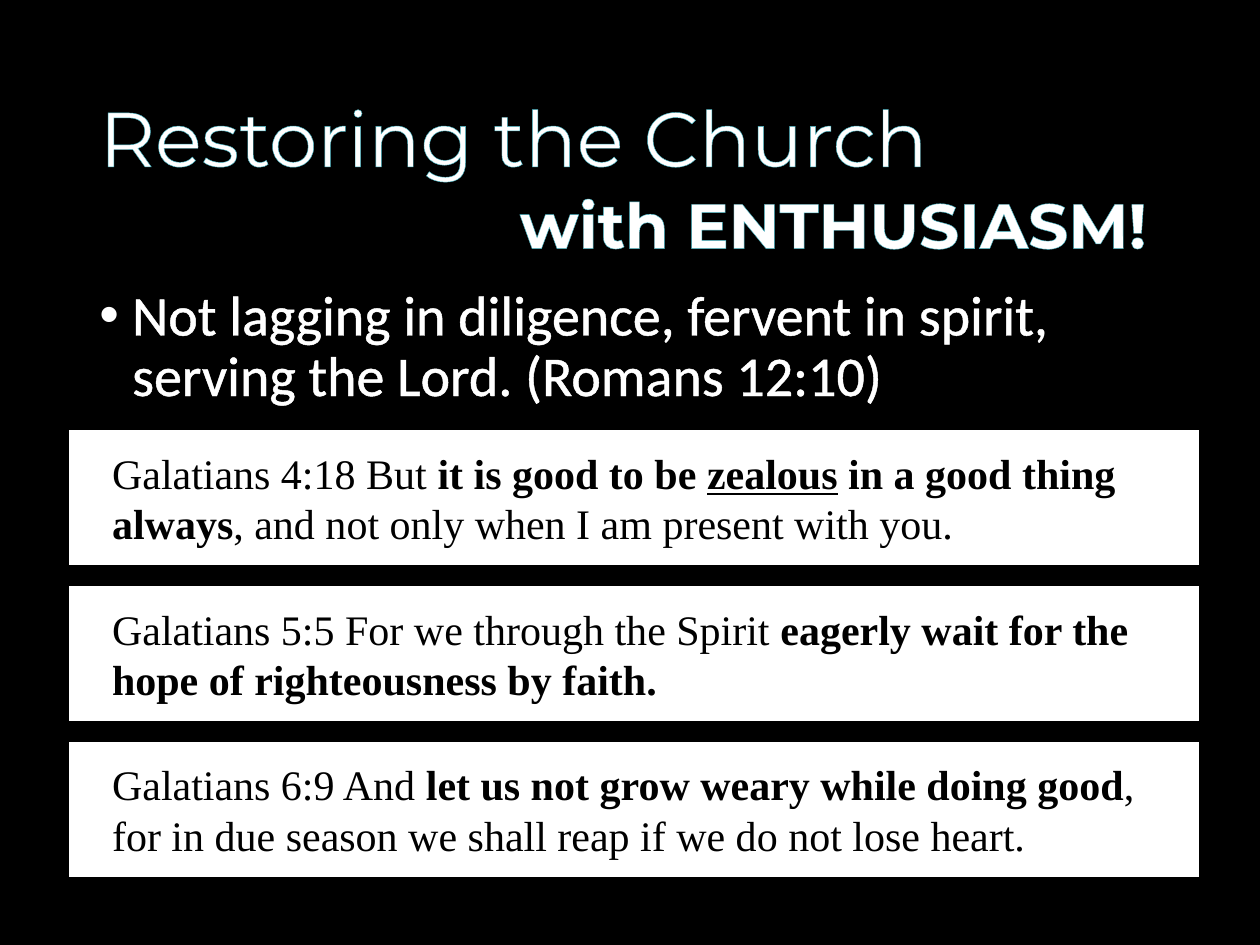
from lxml import etree
from pptx import Presentation
from pptx.dml.color import RGBColor
from pptx.enum.shapes import MSO_SHAPE as Shape
from pptx.enum.text import MSO_ANCHOR as Anchor, PP_ALIGN as Align
from pptx.oxml.ns import qn
from pptx.util import Cm, Pt

INDENT = Cm(0.66)
TEAL, WHITE, BLACK = "41AEBD", "FFFFFF", "000000"
HEADING = dict(name="Montserrat", size=Pt(44), bold=False)
SUBHEADING = dict(name="Montserrat", size=Pt(36), bold=True)
POINT = dict(name="Calibri", size=Pt(32))
VERSE = dict(name="Times New Roman", size=Pt(24))

# Each verse is a list of (text, extra formats)
BOLD = dict(bold=True)
VERSES = [
    [("Galatians 4:18 But ", {}), ("it is good to be ", BOLD),
     ("zealous", dict(bold=True, underline=True)),
     (" in a good thing always", BOLD),
     (", and not only when I am present with you.", {})],
    [("Galatians 5:5 For we through the Spirit ", {}),
     ("eagerly wait for the hope of righteousness by faith.", BOLD)],
    [("Galatians 6:9 And ", {}),
     ("let us not grow weary while doing good", BOLD),
     (", for in due season we shall reap if we do not lose heart.", {})],
]


def paint(color_format, hex_color):
    color_format.rgb = RGBColor.from_string(hex_color)


def add_run(paragraph, text, formats, color):
    run = paragraph.add_run()
    run.text = text
    for attribute, value in formats.items():
        setattr(run.font, attribute, value)
    run.font.fill.solid()
    paint(run.font.color, color)
    return run


def outline(run, color, width):
    """Give the letters an outline, which python-pptx has no method for."""
    line = etree.Element(qn("a:ln"), w=str(int(Pt(width))))
    fill = etree.SubElement(line, qn("a:solidFill"))
    etree.SubElement(fill, qn("a:srgbClr"), val=color)
    run.font._element.insert(0, line)


def place(part, left, top, width, height):
    part.left, part.top = Cm(left), Cm(top)
    part.width, part.height = Cm(width), Cm(height)


def format_frame(part, anchor, align):
    frame = part.text_frame
    frame.word_wrap = True
    frame.vertical_anchor = anchor
    paragraph = frame.paragraphs[0]
    paragraph.alignment = align
    paragraph.space_before = Pt(0)
    return paragraph


def add_heading(slide, left, top, width):
    # Title on the left, second line pushed to the right below it
    title = slide.shapes.title
    place(title, left, top, width, 3.68)
    paragraph = format_frame(title, Anchor.MIDDLE, Align.LEFT)
    paragraph.line_spacing = 0.9
    outline(add_run(paragraph, "Restoring the Church", HEADING, WHITE), TEAL, 0)

    subheading = slide.shapes.add_textbox(0, 0, 0, 0)
    place(subheading, left - 0.28, top + 2.77, width, 2.44)
    paragraph = format_frame(subheading, Anchor.TOP, Align.RIGHT)
    paragraph.line_spacing = 0.9
    outline(add_run(paragraph, "with ENTHUSIASM!", SUBHEADING, WHITE), TEAL, 0.75)


def add_point(slide, left, top, width, height):
    body = slide.placeholders[1]
    place(body, left, top, width, height)
    paragraph = format_frame(body, Anchor.TOP, Align.LEFT)
    paragraph.line_spacing = 0.9
    properties = paragraph._p.get_or_add_pPr()
    properties.set("marL", str(INDENT))
    properties.set("indent", str(-INDENT))
    etree.SubElement(properties, qn("a:buFont"), typeface="Arial")
    etree.SubElement(properties, qn("a:buChar"), char="•")
    text = "Not lagging in diligence, fervent in spirit, serving the Lord. (Romans 12:10)"
    outline(add_run(paragraph, text, POINT, WHITE), WHITE, 0.75)


def add_verses(slide, left, top, width, height, gap=0.35):
    # Equal white panels stacked down the box
    panel_height = (height - gap * (len(VERSES) - 1)) / len(VERSES)
    for row, verse in enumerate(VERSES):
        panel = slide.shapes.add_shape(Shape.RECTANGLE, 0, 0, 0, 0)
        place(panel, left, top + row * (panel_height + gap), width, panel_height)
        panel.shadow.inherit = False
        panel.fill.solid()
        paint(panel.fill.fore_color, WHITE)
        paint(panel.line.color, BLACK)
        panel.line.width = Pt(2)
        paragraph = format_frame(panel, Anchor.MIDDLE, Align.LEFT)
        paragraph._p.get_or_add_pPr().set("marL", str(INDENT))
        for text, extra in verse:
            add_run(paragraph, text, VERSE | extra, BLACK)


def main():
    deck = Presentation()
    deck.slide_width, deck.slide_height = Cm(25.4), Cm(19.05)
    slide = deck.slides.add_slide(deck.slide_layouts[1])
    slide.background.fill.solid()
    paint(slide.background.fill.fore_color, BLACK)

    add_heading(slide, 1.75, 1.02, 21.9)
    add_point(slide, 1.75, 5.66, 21.9, 11.48)
    add_verses(slide, 1.35, 8.64, 22.86, 9.07)
    deck.save("out.pptx")


if __name__ == "__main__":
    main()
